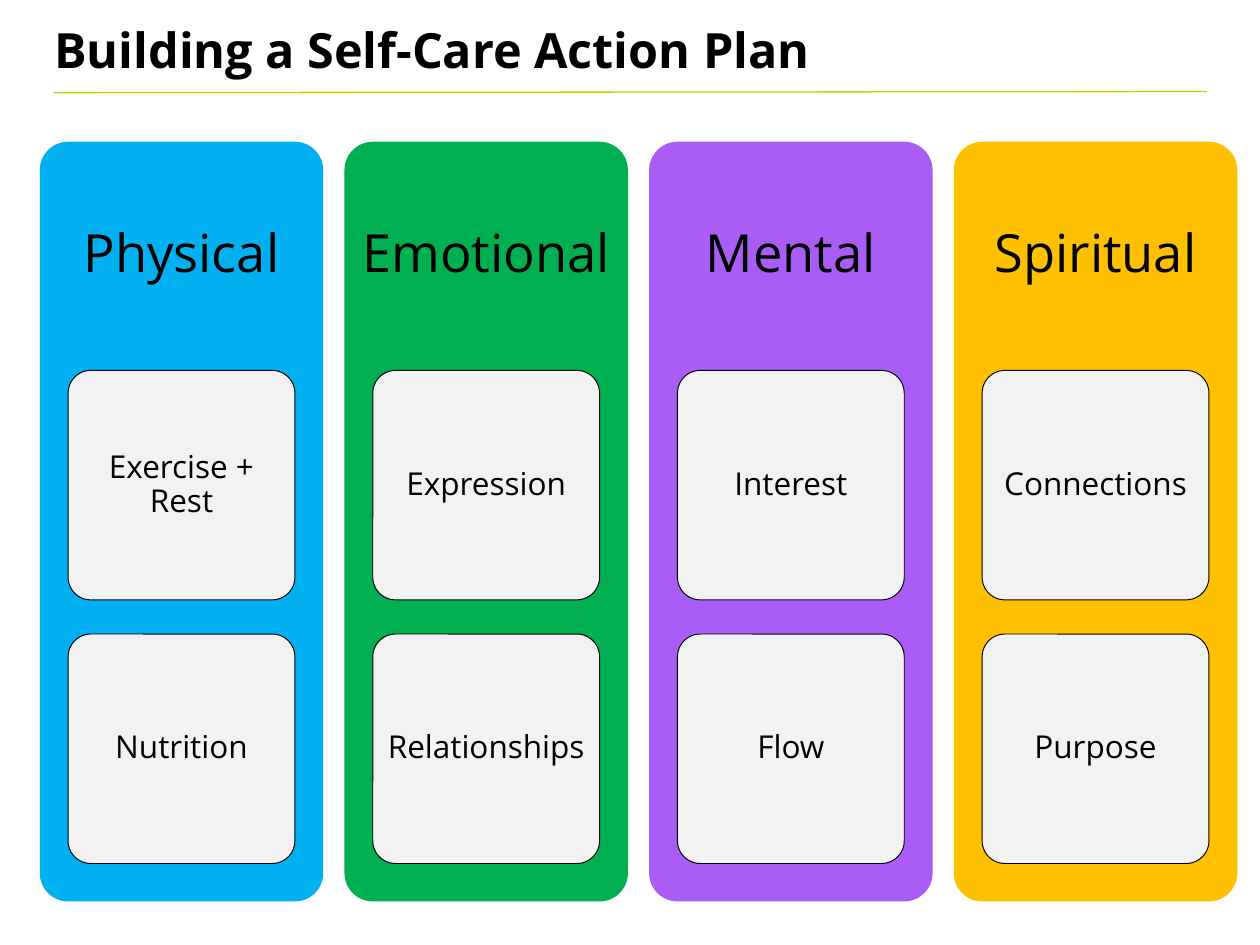
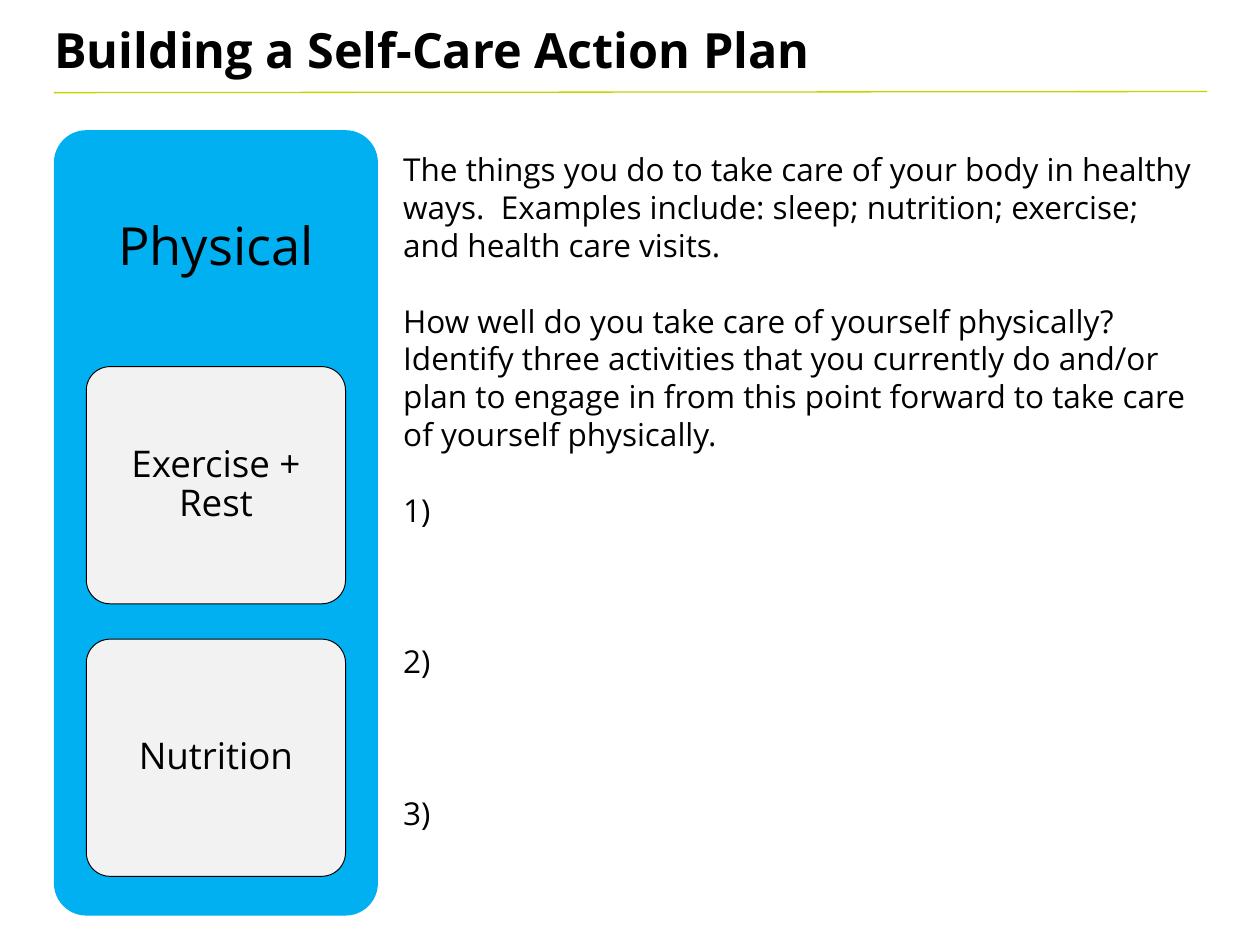
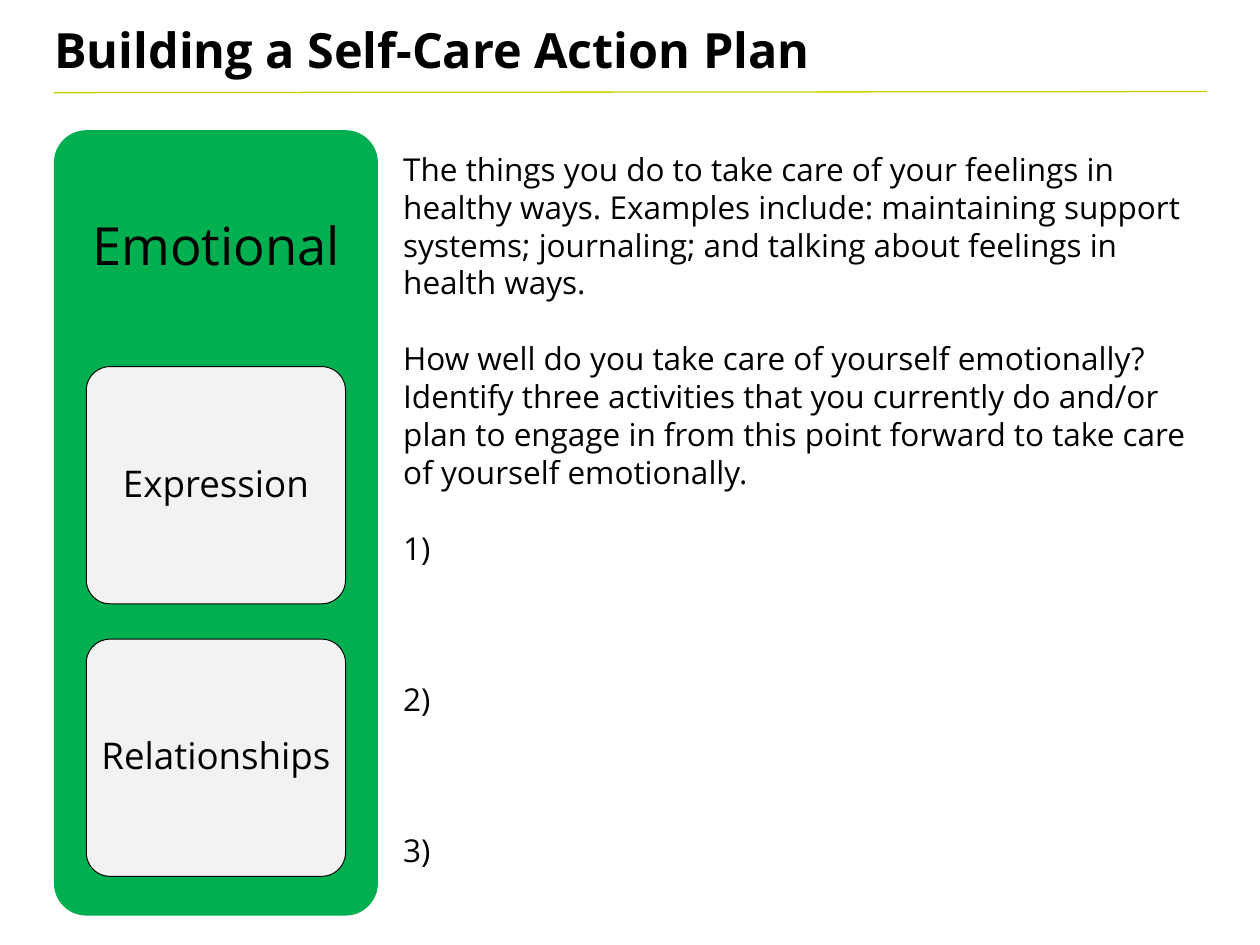
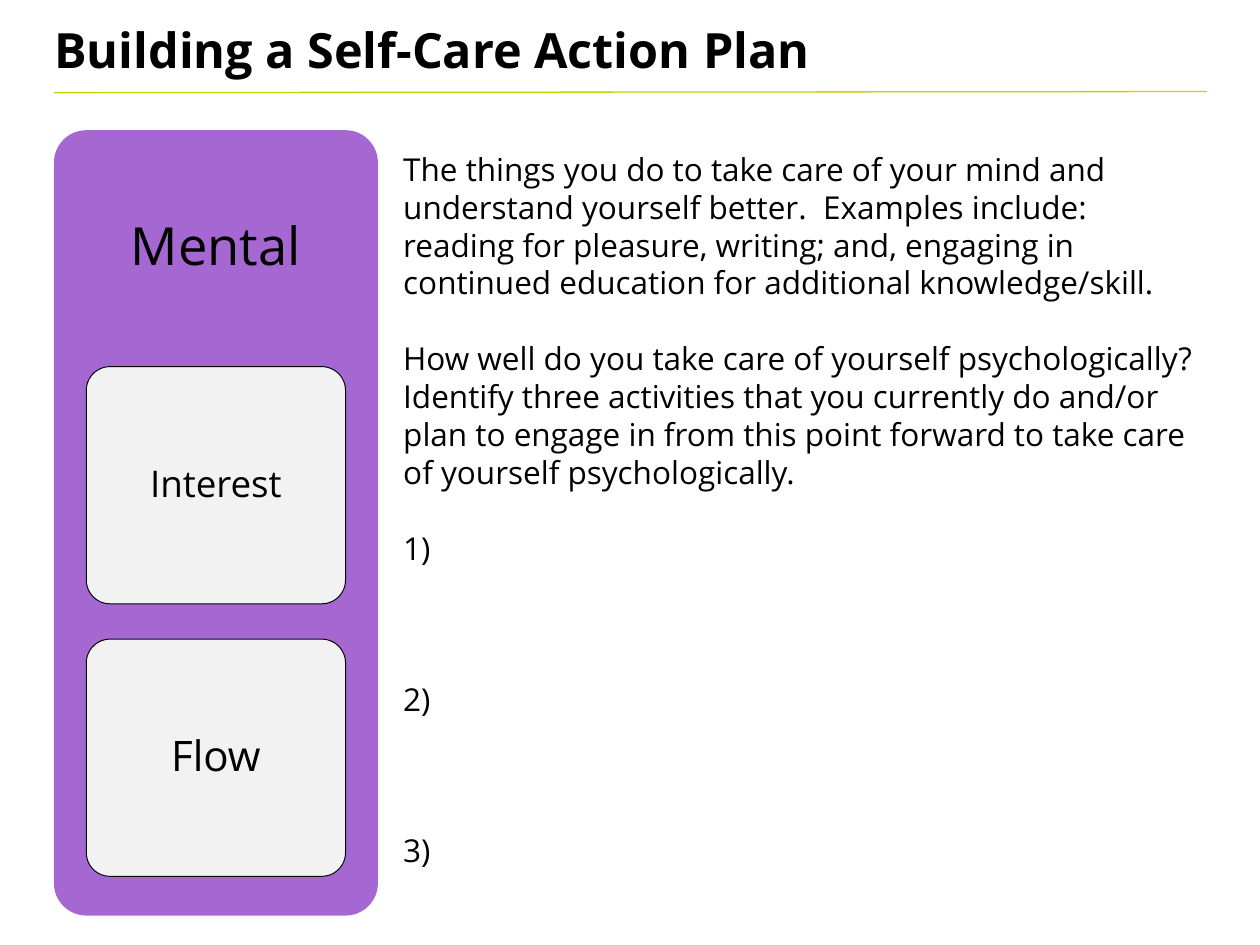
from dataclasses import dataclass

from lxml import etree
from pptx import Presentation
from pptx.dml.color import RGBColor
from pptx.enum.shapes import MSO_CONNECTOR, MSO_SHAPE
from pptx.enum.text import MSO_ANCHOR, MSO_AUTO_SIZE, PP_ALIGN
from pptx.oxml.ns import qn
from pptx.util import Cm, Pt

ROUNDED = MSO_SHAPE.ROUNDED_RECTANGLE
STRAIGHT = MSO_CONNECTOR.STRAIGHT
TOP, MIDDLE = MSO_ANCHOR.TOP, MSO_ANCHOR.MIDDLE
LEFT, CENTER = PP_ALIGN.LEFT, PP_ALIGN.CENTER
GROW = MSO_AUTO_SIZE.SHAPE_TO_FIT_TEXT
TITLE_ONLY = 5

TITLE = "Building a Self-Care Action Plan"

# Area of self-care: (column colour, practices)
AREAS = {
    "Physical": ("00B0F0", ["Exercise + Rest", "Nutrition"]),
    "Emotional": ("00B050", ["Expression", "Relationships"]),
    "Mental": ("A95CF6", ["Interest", "Flow"]),
    "Spiritual": ("FFC000", ["Connections", "Purpose"]),
}

QUESTION = (
    "How well do you take care of yourself {0}? Identify three activities that "
    "you currently do and/or plan to engage in from this point forward to take "
    "care of yourself {0}."
)
ANSWERS = ["1)", "2)", "3)"]

WORKSHEETS = [
    {
        "area": "Physical",
        "adverb": "physically",
        "meaning": "The things you do to take care of your body in healthy ways.  "
        "Examples include: sleep; nutrition; exercise; and health care visits.",
    },
    {
        "area": "Emotional",
        "adverb": "emotionally",
        "meaning": "The things you do to take care of your feelings in healthy ways. "
        "Examples include: maintaining support systems; journaling; and talking "
        "about feelings in health ways.",
    },
    {
        "area": "Mental",
        "adverb": "psychologically",
        "meaning": "The things you do to take care of your mind and understand "
        "yourself better.  Examples include: reading for pleasure, writing; and, "
        "engaging in continued education for additional knowledge/skill.",
        "color": "A568D2",
        "practice_sizes": [28, 32],
    },
]


@dataclass(frozen=True)
class Theme:
    font: str = "Open Sans"
    ink: str = "000000"
    card: str = "F2F2F2"
    rule: str = "C6D301"
    title_size: float = 37
    heading_size: float = 40
    overview_size: float = 24
    practice_size: float = 28
    body_size: float = 24
    blank_line: float = 29
    answer_gap: float = 86.5


THEME = Theme()

# Column proportions, as shares of its height or width
HEADING_SHARE = 0.3
CARD_TOP, CARD_STEP, CARD_HEIGHT = 0.301, 0.347, 0.302
CARD_INDENT = 0.1


def rgb(color):
    return RGBColor.from_string(color)


def set_margins(frame, across, down):
    frame.margin_left = frame.margin_right = Cm(across)
    frame.margin_top = frame.margin_bottom = Cm(down)


def style_text(frame, size, align=LEFT, anchor=TOP, bold=False, spacing=None):
    frame.word_wrap = True
    frame.vertical_anchor = anchor
    for paragraph in frame.paragraphs:
        paragraph.alignment = align
        paragraph.line_spacing = spacing
        for run in paragraph.runs:
            run.font.name = THEME.font
            run.font.size = Pt(size)
            run.font.bold = bold
            run.font.color.rgb = rgb(THEME.ink)


def add_rounded(slide, left, top, width, height, color):
    box = slide.shapes.add_shape(ROUNDED, Cm(left), Cm(top), Cm(width), Cm(height))
    box.adjustments[0] = 0.1
    box.shadow.inherit = False
    box.fill.solid()
    box.fill.fore_color.rgb = rgb(color)
    box.line.fill.background()
    return box


def add_column(slide, area, left, top, width, height, sizes, color=None):
    """Draw one area of self-care: a coloured column, its heading and its cards."""
    area_color, practices = AREAS[area]
    add_rounded(slide, left, top, width, height, color or area_color)

    heading = slide.shapes.add_textbox(
        Cm(left), Cm(top), Cm(width), Cm(height * HEADING_SHARE)
    ).text_frame
    heading.text = area
    set_margins(heading, 0.43, 0.43)
    style_text(heading, THEME.heading_size, CENTER, MIDDLE, spacing=0.9)

    for row, (practice, size) in enumerate(zip(practices, sizes)):
        card = add_rounded(
            slide,
            left + width * CARD_INDENT,
            top + height * (CARD_TOP + row * CARD_STEP),
            width * (1 - 2 * CARD_INDENT),
            height * CARD_HEIGHT,
            THEME.card,
        )
        card.line.color.rgb = rgb(THEME.ink)
        card.line.width = Pt(0.75)
        card.text_frame.text = practice
        set_margins(card.text_frame, 0.18, 0.13)
        style_text(card.text_frame, size, CENTER, MIDDLE, spacing=0.9)


def add_titled_slide(deck):
    slide = deck.slides.add_slide(deck.slide_layouts[TITLE_ONLY])
    title = slide.shapes.title
    title.left, title.top = Cm(1.12), Cm(0.36)
    title.width, title.height = Cm(22.71), Cm(1.93)
    title.text_frame.text = TITLE
    title.text_frame.auto_size = GROW
    set_margins(title.text_frame, 0.34, 0.17)
    style_text(title.text_frame, THEME.title_size, bold=True)

    rule = slide.shapes.add_connector(
        STRAIGHT, Cm(1.45), Cm(2.49), Cm(32.44), Cm(2.46)
    )
    rule.line.color.rgb = rgb(THEME.rule)
    rule.line.width = Pt(1)
    etree.SubElement(rule._element.spPr, qn("a:effectLst"))
    return slide


def add_overview(deck):
    slide = add_titled_slide(deck)
    for index, area in enumerate(AREAS):
        add_column(slide, area, 1.07 + index * 8.19, 3.81, 7.62, 20.42,
                   [THEME.overview_size] * 2)


def add_worksheet(deck, sheet):
    slide = add_titled_slide(deck)
    sizes = sheet.get("practice_sizes", [THEME.practice_size] * 2)
    add_column(slide, sheet["area"], 1.45, 3.5, 8.71, 21.11, sizes,
               sheet.get("color"))

    prompts = slide.shapes.add_textbox(
        Cm(10.59), Cm(3.91), Cm(21.84), Cm(19.5)
    ).text_frame
    question = QUESTION.format(sheet["adverb"])
    prompts.text = "\n".join([sheet["meaning"], question, *ANSWERS])
    prompts.auto_size = GROW
    style_text(prompts, THEME.body_size)
    gaps = [0, THEME.blank_line, THEME.blank_line, THEME.answer_gap, THEME.answer_gap]
    for paragraph, gap in zip(prompts.paragraphs, gaps):
        paragraph.space_before = Pt(gap)


def main():
    deck = Presentation()
    deck.slide_width, deck.slide_height = Cm(33.87), Cm(25.4)
    add_overview(deck)
    for sheet in WORKSHEETS:
        add_worksheet(deck, sheet)
    deck.save("out.pptx")


if __name__ == "__main__":
    main()
